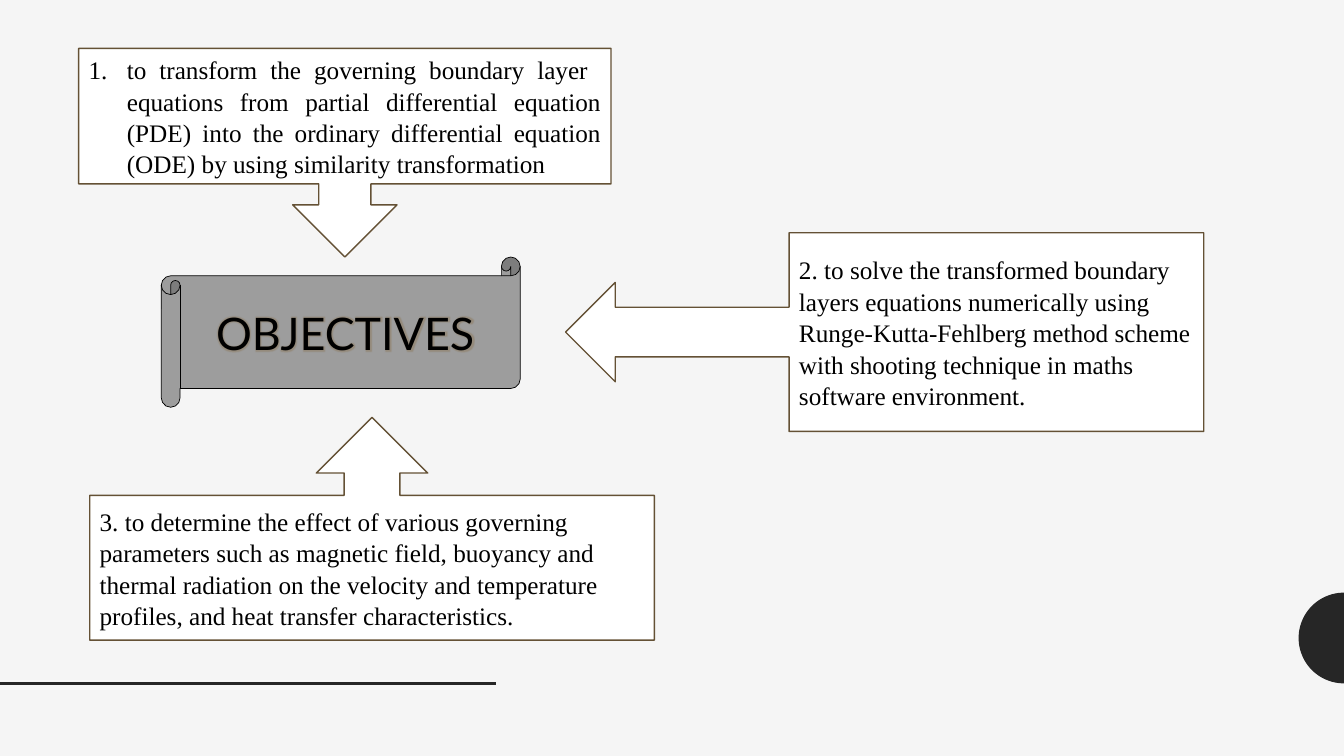
"""Build the objectives slide: a scroll with three callouts pointing at it."""
import math

import lxml.etree
import pptx
import pptx.dml.color
import pptx.enum.shapes
import pptx.enum.text
import pptx.oxml.ns
import pptx.util

Inches = pptx.util.Inches
Pt = pptx.util.Pt
RGBColor = pptx.dml.color.RGBColor
Shapes = pptx.enum.shapes.MSO_SHAPE
Align = pptx.enum.text.PP_ALIGN
qn = pptx.oxml.ns.qn

PAPER = RGBColor(0xF5, 0xF5, 0xF5)
DARK = RGBColor(0x26, 0x26, 0x26)
GREY = RGBColor(0x9D, 0x9D, 0x9D)
BROWN = RGBColor(0x64, 0x51, 0x35)
GLOW = RGBColor(0x8A, 0x71, 0x4C)
BLACK = RGBColor(0, 0, 0)
WHITE = RGBColor(0xFF, 0xFF, 0xFF)

CALLOUTS = [
    (Shapes.DOWN_ARROW_CALLOUT, (0.78, 0.48, 5.28, 2.07),
     "to transform the governing boundary layer  equations from partial "
     "differential equation (PDE) into the ordinary differential equation "
     "(ODE) by using similarity transformation",
     {"align": Align.JUSTIFY, "numbered": True}),
    (Shapes.LEFT_ARROW_CALLOUT, (5.61, 2.31, 6.33, 1.97),
     "2. to solve the transformed boundary layers equations numerically "
     "using Runge-Kutta-Fehlberg method scheme with shooting technique in "
     "maths software environment.", {}),
    (Shapes.UP_ARROW_CALLOUT, (0.89, 4.14, 5.6, 2.21),
     "3. to determine the effect of various governing parameters such as "
     "magnetic field, buoyancy and thermal radiation on the velocity and "
     "temperature profiles, and heat transfer characteristics.", {}),
]


def write_text(shape, text, font="Times New Roman", size=18, color=BLACK,
               align=Align.LEFT, spacing=1.04, numbered=False):
    """Write one formatted paragraph, vertically centred, and return its run."""
    frame = shape.text_frame
    frame.word_wrap = True
    frame.vertical_anchor = pptx.enum.text.MSO_ANCHOR.MIDDLE
    para = frame.paragraphs[0]
    para.alignment = align
    para.line_spacing = spacing
    if numbered:
        properties = para._p.get_or_add_pPr()
        properties.set("marL", str(Inches(0.38)))
        properties.set("indent", str(Inches(-0.38)))
        lxml.etree.SubElement(properties, qn("a:buFont"), typeface="+mj-lt")
        lxml.etree.SubElement(properties, qn("a:buAutoNum"), type="arabicPeriod")
    span = para.add_run()
    span.text = text
    span.font.name = font
    span.font.size = Pt(size)
    span.font.color.rgb = color
    return span


def add_glow(span, color, radius):
    """Put a translucent glow around the letters of a run."""
    effects = lxml.etree.Element(qn("a:effectLst"))
    glow = lxml.etree.SubElement(effects, qn("a:glow"), rad=str(Pt(radius)))
    tint = lxml.etree.SubElement(glow, qn("a:srgbClr"), val=str(color))
    lxml.etree.SubElement(tint, qn("a:alpha"), val="40000")
    span.font._element.find(qn("a:solidFill")).addnext(effects)


def add_box(page, kind, place, fill, line, width):
    """Add a preset shape with a flat fill and outline."""
    box = page.shapes.add_shape(kind, *map(Inches, place))
    box.shadow.inherit = False
    box.fill.solid()
    box.fill.fore_color.rgb = fill
    box.line.color.rgb = line
    box.line.width = Pt(width)
    return box


def add_half_disc(page, edge, middle, radius, steps=48):
    """Add a half disc whose flat side stands on the slide's right edge."""
    angles = [math.pi * (0.5 + step / steps) for step in range(steps + 1)]
    points = [(Inches(edge + radius * math.cos(angle)),
               Inches(middle - radius * math.sin(angle))) for angle in angles]
    builder = page.shapes.build_freeform(*points[0])
    builder.add_line_segments(points[1:], close=True)
    disc = builder.convert_to_shape()
    disc.shadow.inherit = False
    disc.fill.solid()
    disc.fill.fore_color.rgb = DARK
    disc.line.fill.background()


def add_rule(page, length, top):
    """Add the horizontal line that starts at the left edge."""
    rule = page.shapes.add_connector(
        pptx.enum.shapes.MSO_CONNECTOR.STRAIGHT,
        Inches(0), Inches(top), Inches(length), Inches(top))
    rule.line.color.rgb = DARK
    rule.line.width = Pt(2)
    lxml.etree.SubElement(rule._element.spPr, qn("a:effectLst"))


def add_title(page, text, place):
    """Move the title placeholder onto the scroll and write the heading."""
    title = page.shapes.title
    title.left, title.top, title.width, title.height = map(Inches, place)
    page.shapes._spTree.append(title._element)
    span = write_text(title, text, font="Lato", size=32,
                      align=Align.CENTER, spacing=1.0)
    add_glow(span, GLOW, 3)


def main():
    """Build and save the deck."""
    deck = pptx.Presentation()
    deck.slide_width = Inches(13.33)
    deck.slide_height = Inches(7.5)
    page = deck.slides.add_slide(deck.slide_layouts[5])
    page.background.fill.solid()
    page.background.fill.fore_color.rgb = PAPER

    add_half_disc(page, edge=13.33, middle=6.33, radius=0.45)
    add_rule(page, length=4.92, top=6.78)
    add_box(page, Shapes.HORIZONTAL_SCROLL, (1.6, 2.55, 3.56, 1.49),
            GREY, BLACK, 0.5)
    add_title(page, "OBJECTIVES", (1.79, 2.74, 3.27, 1.11))
    for kind, place, text, style in CALLOUTS:
        box = add_box(page, kind, place, WHITE, BROWN, 1)
        write_text(box, text, **style)
    deck.save("out.pptx")


if __name__ == "__main__":
    main()
